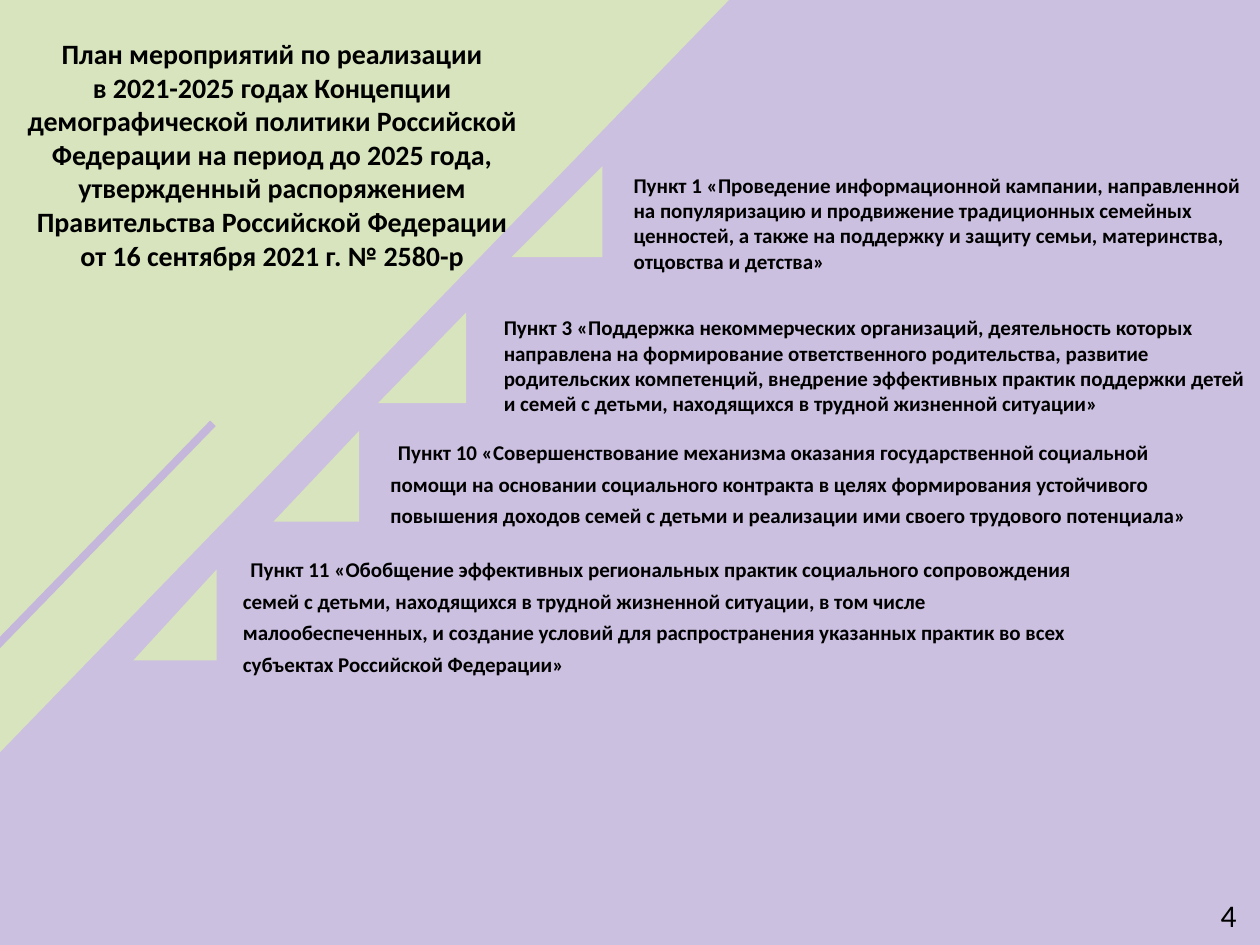
from pptx import Presentation
from pptx.dml.color import RGBColor
from pptx.enum.shapes import MSO_CONNECTOR as Conn, MSO_SHAPE as Shape
from pptx.enum.text import MSO_ANCHOR as Anchor, MSO_AUTO_SIZE as Auto, PP_ALIGN as Align
from pptx.oxml.ns import qn
from pptx.util import Inches, Pt
from lxml.etree import SubElement

COLORS = {"back": "CCC0E0", "band": "C4B7DB", "green": "D7E4BD", "text": "000000"}
FONT = "Calibri"

HEAD = [
    "План мероприятий по реализации",
    "в 2021-2025 годах Концепции демографической политики Российской "
    "Федерации на период до 2025 года, утвержденный распоряжением",
    "Правительства Российской Федерации",
    "от 16 сентября 2021 г. № 2580-р",
]

# Each step: corner left and top, text box, whether lines are spaced wide, words
STEPS = [
    ((4.06, 1.32), (4.93, 1.32, 5.07, 0.91), False,
     "Пункт 1 «Проведение информационной кампании, направленной на популяризацию "
     "и продвижение традиционных семейных ценностей, а также на поддержку и защиту "
     "семьи, материнства, отцовства и детства»"),
    ((3.0, 2.48), (3.9, 2.45, 6.1, 0.91), False,
     "Пункт 3 «Поддержка некоммерческих организаций, деятельность которых направлена "
     "на формирование ответственного родительства, развитие родительских компетенций, "
     "внедрение эффективных практик поддержки детей и семей с детьми, находящихся "
     "в трудной жизненной ситуации»"),
    ((2.17, 3.42), (3.0, 3.39, 6.81, 0.86), True,
     "Пункт 10 «Совершенствование механизма оказания государственной социальной помощи "
     "на основании социального контракта в целях формирования устойчивого повышения "
     "доходов семей с детьми и реализации ими своего трудового потенциала»"),
    ((1.06, 4.52), (1.83, 4.32, 6.93, 1.11), True,
     "Пункт 11 «Обобщение эффективных региональных практик социального сопровождения "
     "семей с детьми, находящихся в трудной жизненной ситуации, в том числе "
     "малообеспеченных, и создание условий для распространения указанных практик "
     "во всех субъектах Российской Федерации»"),
]
CORNER, SHRINK = 0.72, 0.02   # corner size, width lost per step
WIDE, INDENT = Pt(18), Inches(0.06)


def color(name):
    return RGBColor.from_string(COLORS[name])


def inch(box):
    return [Inches(v) for v in box]


def write(frame, lines, size, bold=True, align=Align.LEFT, wide=False, wrap=True):
    frame.word_wrap, frame.auto_size = wrap, Auto.NONE
    frame.vertical_anchor = Anchor.TOP
    style = {"name": FONT, "size": Pt(size), "bold": bold}
    for i, line in enumerate(lines):
        para = frame.add_paragraph() if i else frame.paragraphs[0]
        para.alignment = align
        if wide:
            para.line_spacing = WIDE
            para._p.get_or_add_pPr().set("indent", str(INDENT))
        run = para.add_run()
        run.text = line
        for key, value in style.items():
            setattr(run.font, key, value)
        run.font.color.rgb = color("text")


def wedge(slide, box, tip, turn=0):
    """Add a plain green triangle with its tip at a share of its width."""
    shape = slide.shapes.add_shape(Shape.ISOSCELES_TRIANGLE, *inch(box))
    shape.adjustments[0] = tip
    shape.rotation = turn
    shape.shadow.inherit = False
    shape.fill.solid()
    shape.fill.fore_color.rgb = color("green")
    shape.line.fill.background()


def stripe(slide, start, end):
    line = slide.shapes.add_connector(Conn.STRAIGHT, *inch(start + end))
    line.line.color.rgb = color("band")
    line.line.width = Pt(4.5)
    SubElement(line._element.spPr, qn("a:effectLst"))


def main():
    deck = Presentation()
    deck.slide_width, deck.slide_height = Inches(10), Inches(7.5)
    slide = deck.slides.add_slide(deck.slide_layouts[5])
    fill = slide.background.fill
    fill.solid()
    fill.fore_color.rgb = color("back")

    wedge(slide, (-2.81, -0.62, 8.38, 4.24), 0.51, 314.1)
    stripe(slide, (-0.04, 5.14), (1.69, 3.36))

    for i, (corner, box, wide, words) in enumerate(STEPS):
        wedge(slide, corner + (CORNER - SHRINK * i, CORNER), 1)
        text = slide.shapes.add_textbox(*inch(box))
        write(text.text_frame, [words], 12, wide=wide)

    title = slide.shapes.title
    title.left, title.top, title.width, title.height = inch((-0.2, 0.24, 4.72, 1.99))
    write(title.text_frame, HEAD, 16, align=Align.CENTER)
    # The title stands in front of the green field
    slide.shapes._spTree.append(title._element)

    number = slide.shapes.add_textbox(*inch((9.59, 7.06, 0.33, 0.4)))
    write(number.text_frame, ["4"], 18, bold=False, wrap=False)

    deck.save("out.pptx")


if __name__ == "__main__":
    main()
